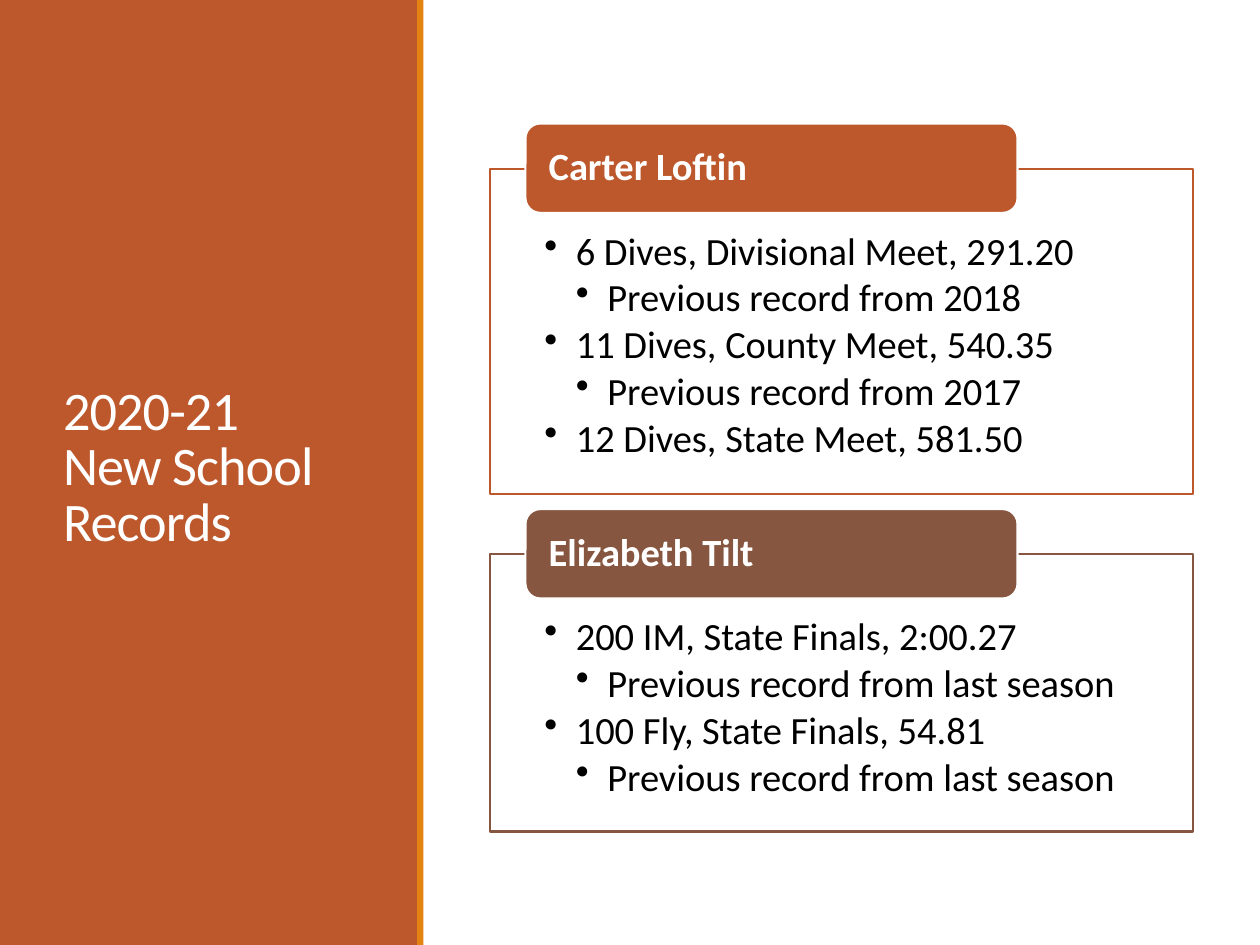
from lxml.etree import SubElement
from pptx import Presentation
from pptx.dml.color import RGBColor
from pptx.enum.shapes import MSO_SHAPE as Preset
from pptx.enum.text import MSO_ANCHOR as Anchor, MSO_AUTO_SIZE as AutoSize, PP_ALIGN as Align
from pptx.oxml.ns import qn
from pptx.util import Inches, Pt

RUST = RGBColor(0xBD, 0x58, 0x2C)
ORANGE = RGBColor(0xE4, 0x83, 0x12)
BROWN = RGBColor(0x86, 0x56, 0x40)
WHITE = RGBColor(0xFF, 0xFF, 0xFF)
BLACK = RGBColor(0, 0, 0)

ATHLETES = [
    ("Carter Loftin", RUST, 1.34, 2.58, [
        (0, "6 Dives, Divisional Meet, 291.20"),
        (1, "Previous record from 2018"),
        (0, "11 Dives, County Meet, 540.35"),
        (1, "Previous record from 2017"),
        (0, "12 Dives, State Meet, 581.50"),
    ]),
    ("Elizabeth Tilt", BROWN, 4.4, 2.2, [
        (0, "200 IM, State Finals, 2:00.27"),
        (1, "Previous record from last season"),
        (0, "100 Fly, State Finals, 54.81"),
        (1, "Previous record from last season"),
    ]),
]


def add_box(slide, preset, left, top, width, height, fill, line=None):
    """Add a flat filled shape, outlined when a line colour is given."""
    shape = slide.shapes.add_shape(
        preset, Inches(left), Inches(top), Inches(width), Inches(height))
    shape.shadow.inherit = False
    shape.fill.solid()
    shape.fill.fore_color.rgb = fill
    if line is None:
        shape.line.fill.background()
    else:
        shape.line.color.rgb = line
        shape.line.width = Pt(1.25)
    return shape


def set_frame(frame, anchor, left, top, right, bottom):
    """Set the wrapping, anchor and insets of a text frame."""
    frame.word_wrap = True
    frame.auto_size = AutoSize.NONE
    frame.vertical_anchor = anchor
    frame.margin_left, frame.margin_top = Inches(left), Inches(top)
    frame.margin_right, frame.margin_bottom = Inches(right), Inches(bottom)


def format_paragraph(paragraph, size, color, bold=False, spacing=0.9):
    """Left-align a paragraph and set its font and line spacing."""
    paragraph.alignment = Align.LEFT
    paragraph.line_spacing = spacing
    paragraph.space_before = Pt(0)
    font = paragraph.font
    font.name, font.size, font.bold = "Calibri", Pt(size), bold
    font.color.rgb = color


def add_bullet(paragraph, level):
    """Give a paragraph a round bullet and a hanging indent for its level."""
    paragraph.level = level
    properties = paragraph._p.get_or_add_pPr()
    properties.set("marL", str(Inches(0.25 * (level + 1))))
    properties.set("indent", str(Inches(-0.25)))
    SubElement(properties, qn("a:buChar"), char="•")


def add_title_panel(slide, left, top, width, height):
    """Draw the coloured side panel and set the slide title on it."""
    panel = add_box(slide, Preset.RECTANGLE, left, top, width, height, RUST)
    add_box(slide, Preset.RECTANGLE, left + width - 0.01, top, 0.05, height, ORANGE)
    title = slide.shapes.title
    panel._element.addnext(title._element)
    title.left, title.top = Inches(left + 0.4), Inches(top + 0.57)
    title.width, title.height = Inches(2.53), Inches(6.31)
    frame = title.text_frame
    frame.text = "2020-21\vNew School Records"
    set_frame(frame, Anchor.MIDDLE, 0.1, 0.05, 0.1, 0.05)
    paragraph = frame.paragraphs[0]
    format_paragraph(paragraph, 31, WHITE, spacing=0.85)
    for run in paragraph.runs:
        run._r.get_or_add_rPr().set("spc", "-50")


def add_athlete(slide, left, top, width, height, name, color, records):
    """Draw an outlined list of records with the athlete's name tab on its edge."""
    body = add_box(slide, Preset.RECTANGLE, left, top, width, height, WHITE, color)
    frame = body.text_frame
    set_frame(frame, Anchor.TOP, 0.43, 0.5, 0.43, 0.17)
    for index, (level, text) in enumerate(records):
        paragraph = frame.add_paragraph() if index else frame.paragraphs[0]
        paragraph.text = text
        add_bullet(paragraph, level)
        format_paragraph(paragraph, 22, BLACK)
        paragraph.space_after = Pt(3)

    tab = add_box(slide, Preset.ROUNDED_RECTANGLE,
                  left + 0.28, top - 0.36, width * 0.7, 0.71, color, WHITE)
    set_frame(tab.text_frame, Anchor.MIDDLE, 0.15, 0, 0.15, 0)
    tab.text_frame.text = name
    format_paragraph(tab.text_frame.paragraphs[0], 22, WHITE, bold=True)


def main():
    """Build the school records slide."""
    presentation = Presentation()
    presentation.slide_width, presentation.slide_height = Inches(10), Inches(7.5)
    slide = presentation.slides.add_slide(presentation.slide_layouts[5])
    add_title_panel(slide, 0, 0, 3.32, 7.5)
    for name, color, top, height, records in ATHLETES:
        add_athlete(slide, 3.89, top, 5.58, height, name, color, records)
    presentation.save("out.pptx")


if __name__ == "__main__":
    main()
